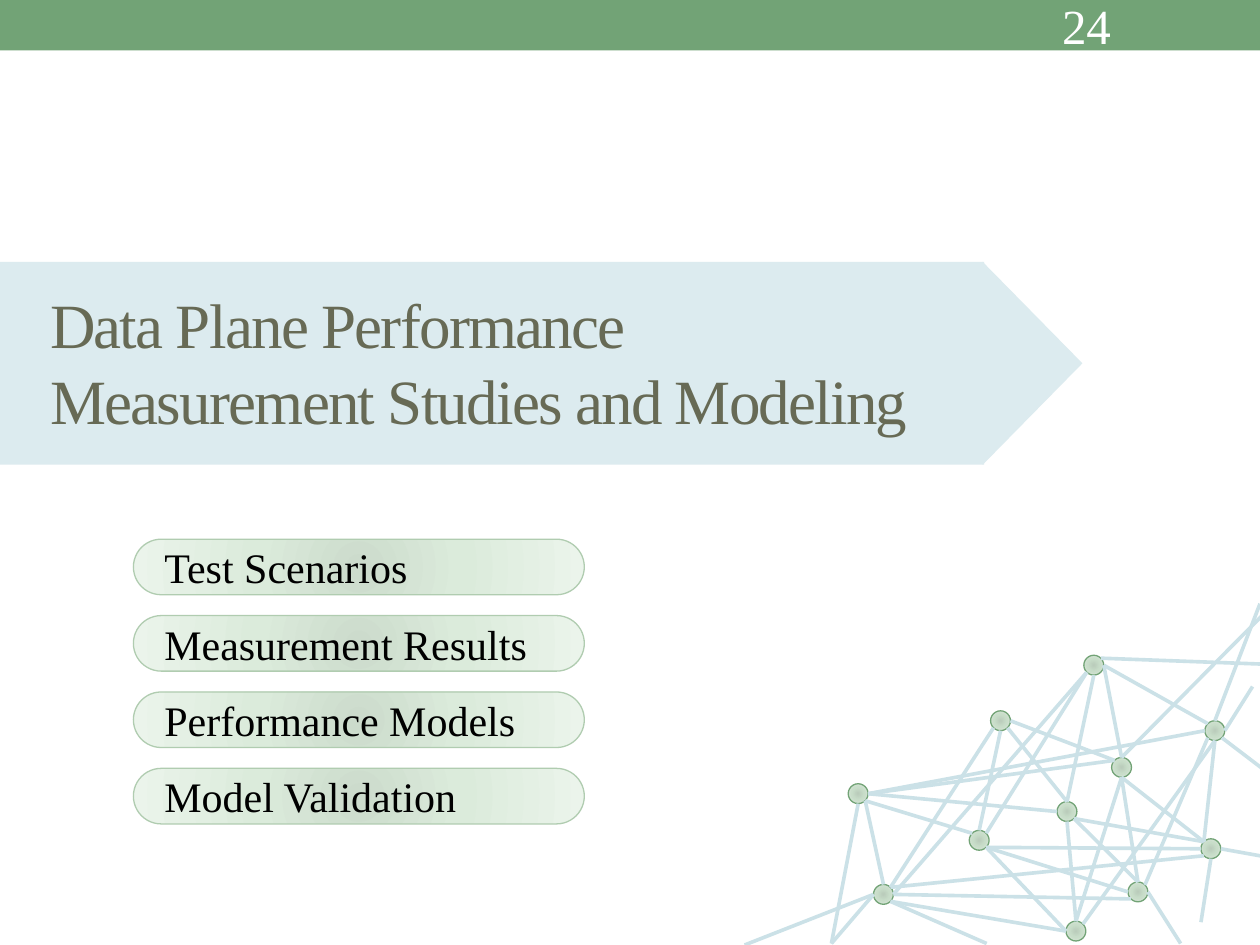
from math import cos, radians, sin

from pptx import Presentation
from pptx.dml.color import RGBColor
from pptx.enum.shapes import MSO_CONNECTOR, MSO_SHAPE
from pptx.enum.text import MSO_ANCHOR, PP_ALIGN
from pptx.oxml.ns import qn
from pptx.util import Cm, Pt
from lxml.etree import SubElement

FONT = "Times New Roman"
HUES = {
    "bar": "72A376", "band": "DCEBEF", "link": "CBE1E7", "edge": "B0CCB0",
    "title": "676A55", "text": "000000", "page": "FFFFFF",
}
# Gradient stops: position in percent and colour
DOT = {0: "BACCBB", 45: "C8DDC9", 100: "E1ECE1"}
PILL = {0: "CCDBCC", 45: "DBEBDB", 100: "EBF4EB"}

# Network: node centres in cm, and the angle of each port on a node
RADIUS = 0.2
NODES = {
    "A": (20.17, 14.53), "B": (22.05, 13.41), "C": (17.3, 16),
    "D": (22.61, 15.47), "E": (24.49, 14.73), "F": (19.74, 16.94),
    "G": (21.51, 16.36), "H": (17.81, 18.03), "I": (24.41, 17.11),
    "J": (22.94, 17.98), "K": (21.69, 18.77),
}
PORTS = {name: 45 * i for i, name in
         enumerate(["e", "se", "s", "sw", "w", "nw", "n", "ne"])}
# Each port and the ports it leads to: node letter, then side
LINKS = {
    "Be": "Enw Dn", "Bs": "Gn", "Bsw": "Fne He",
    "Asw": "Hne", "Ae": "Dnw", "Ase": "Gn", "As": "Fn",
    "Cse": "Hn Fnw", "Ce": "Gw Dnw Ew",
    "He": "Jsw", "Hne": "Isw", "Hse": "Kw",
    "Fse": "Jw Iw Kw", "Gse": "Jn Inw", "Gs": "Kn",
    "Ds": "Jn Inw Kn", "Esw": "Jne", "Es": "Inw Kne",
}
# Links that run out to the slide edge
TAILS = [
    ("Ese", (25.68, 15.67)), ("Ie", (26.06, 17.37)), ("Is", (24.21, 18.59)),
    ("Je", (23.8, 19.02)), ("Hse", (19.89, 19.02)), ("Cs", (16.76, 19.02)),
    ("Hw", (16.76, 19.02)), ("Bne", (26.06, 13.41)), ("Ee", (25.25, 13.84)),
    ("Hw", (15.01, 19.05)), ("En", (25.4, 12.17)), ("Dn", (25.68, 12.17)),
]
TOPICS = ["Test Scenarios", "Measurement Results",
          "Performance Models", "Model Validation"]


def tint(name):
    return RGBColor.from_string(HUES[name])


def glow(shape, stops):
    """Fill a shape with a round gradient."""
    shape.fill.gradient()
    grad = shape._element.spPr.find(qn("a:gradFill"))
    grad.clear()
    row = SubElement(grad, qn("a:gsLst"))
    for pos, hue in stops.items():
        stop = SubElement(row, qn("a:gs"), pos=str(pos * 1000))
        SubElement(stop, qn("a:srgbClr"), val=hue)
    way = SubElement(grad, qn("a:path"))
    way.set("path", "circle")
    SubElement(way, qn("a:fillToRect"),
               {side: "100000" for side in "ltrb"})


def block(slide, kind, box, fill, edge=None):
    """Add a preset shape; fill is a colour name or gradient stops."""
    shape = slide.shapes.add_shape(kind, *map(Cm, box))
    shape.shadow.inherit = False
    if isinstance(fill, dict):
        glow(shape, fill)
    else:
        shape.fill.solid()
        shape.fill.fore_color.rgb = tint(fill)
    if edge:
        shape.line.color.rgb = tint(edge)
        shape.line.width = Pt(0.75)
    else:
        shape.line.fill.background()
    return shape


def write(shape, lines, size, hue, inset=0.25, gap=0):
    """Write lines, parted by line breaks, in one paragraph."""
    frame = shape.text_frame
    frame.word_wrap = True
    frame.vertical_anchor = MSO_ANCHOR.MIDDLE
    frame.margin_left = Cm(inset)
    frame.margin_top = frame.margin_bottom = 0
    para = frame.paragraphs[0]
    para.alignment = PP_ALIGN.LEFT
    for i, line in enumerate(lines):
        if i:
            para.add_line_break()
        run = para.add_run()
        run.text = line
        run.font.name = FONT
        run.font.size = Pt(size)
        run.font.color.rgb = tint(hue)
        if gap:
            run._r.get_or_add_rPr().set("spc", str(gap))


def label(slide, box, lines, size, hue, gap=0):
    write(slide.shapes.add_textbox(*map(Cm, box)), lines, size, hue, gap=gap)


def port(key):
    """Find the point on a node's rim, such as "Bsw"."""
    x, y = NODES[key[0]]
    turn = radians(PORTS[key[1:]])
    return x + RADIUS * cos(turn), y + RADIUS * sin(turn)


def link(slide, start, end):
    line = slide.shapes.add_connector(
        MSO_CONNECTOR.STRAIGHT, *map(Cm, start + end))
    line.line.color.rgb = tint("link")
    line.line.width = Pt(2.08)
    SubElement(line._element.spPr, qn("a:effectLst"))


def mesh(slide):
    for x, y in NODES.values():
        box = (x - RADIUS, y - RADIUS, 2 * RADIUS, 2 * RADIUS)
        block(slide, MSO_SHAPE.OVAL, box, DOT, "bar")
    for start, ends in LINKS.items():
        for end in ends.split():
            link(slide, port(start), port(end))
    for start, end in TAILS:
        link(slide, port(start), end)


def main():
    deck = Presentation()
    deck.slide_width, deck.slide_height = Cm(25.4), Cm(19.05)
    slide = deck.slides.add_slide(deck.slide_layouts[6])

    # Top bar and network
    block(slide, MSO_SHAPE.RECTANGLE, (0, 0, 25.4, 1.02), "bar")
    mesh(slide)

    # Title band, page number and arrow tip
    block(slide, MSO_SHAPE.RECTANGLE, (0, 5.28, 19.84, 4.09), "band")
    label(slide, (0.76, 5.92, 22.86, 2.74),
          ["Data Plane Performance ", "Measurement Studies and Modeling"],
          36, "title", gap=-100)
    label(slide, (21.16, 0.05, 2.97, 0.91), ["24"], 28, "page")
    tip = block(slide, MSO_SHAPE.ISOSCELES_TRIANGLE,
                (18.77, 6.32, 4.09, 2.01), "band")
    tip.rotation = 90

    # Topic pills
    for i, topic in enumerate(TOPICS):
        pill = block(slide, MSO_SHAPE.ROUNDED_RECTANGLE,
                     (2.69, 10.87 + 1.54 * i, 9.09, 1.12), PILL, "edge")
        pill.adjustments[0] = 0.5
        write(pill, [topic], 24, "text", inset=0.46)

    deck.save("out.pptx")


if __name__ == "__main__":
    main()
